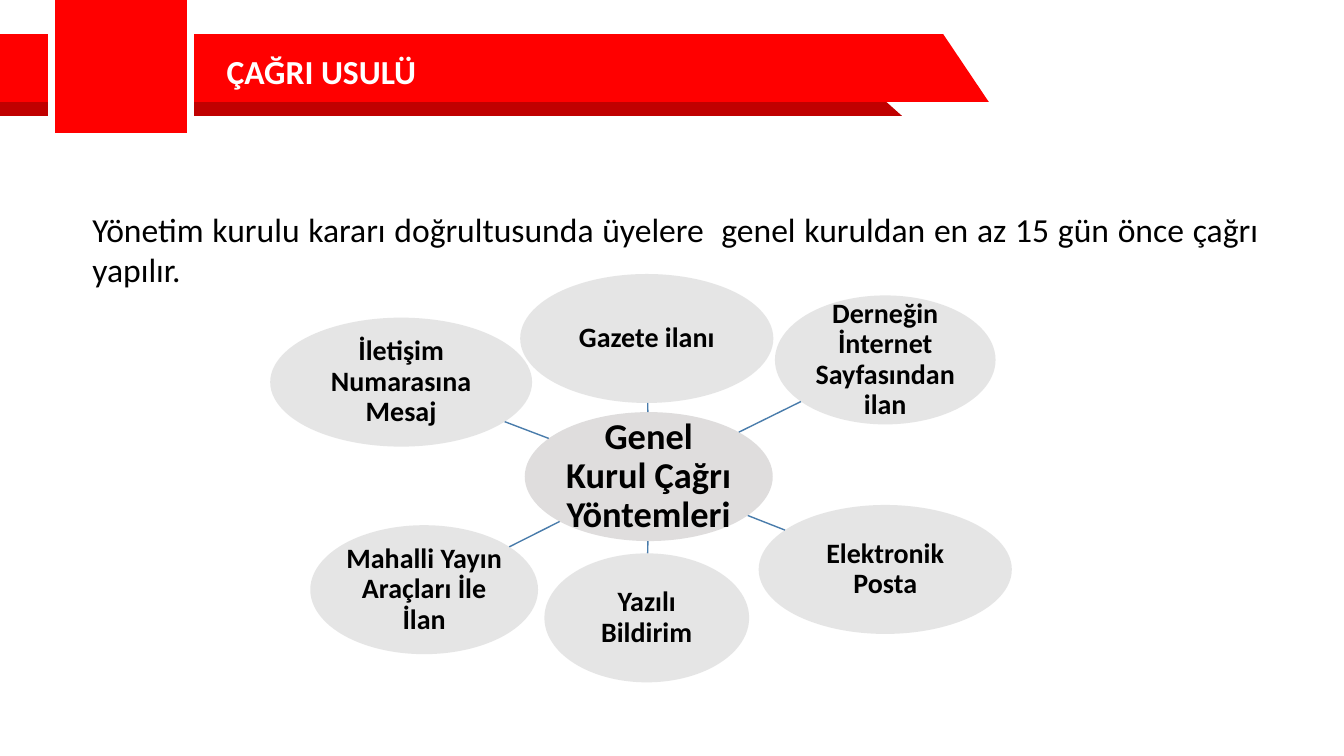
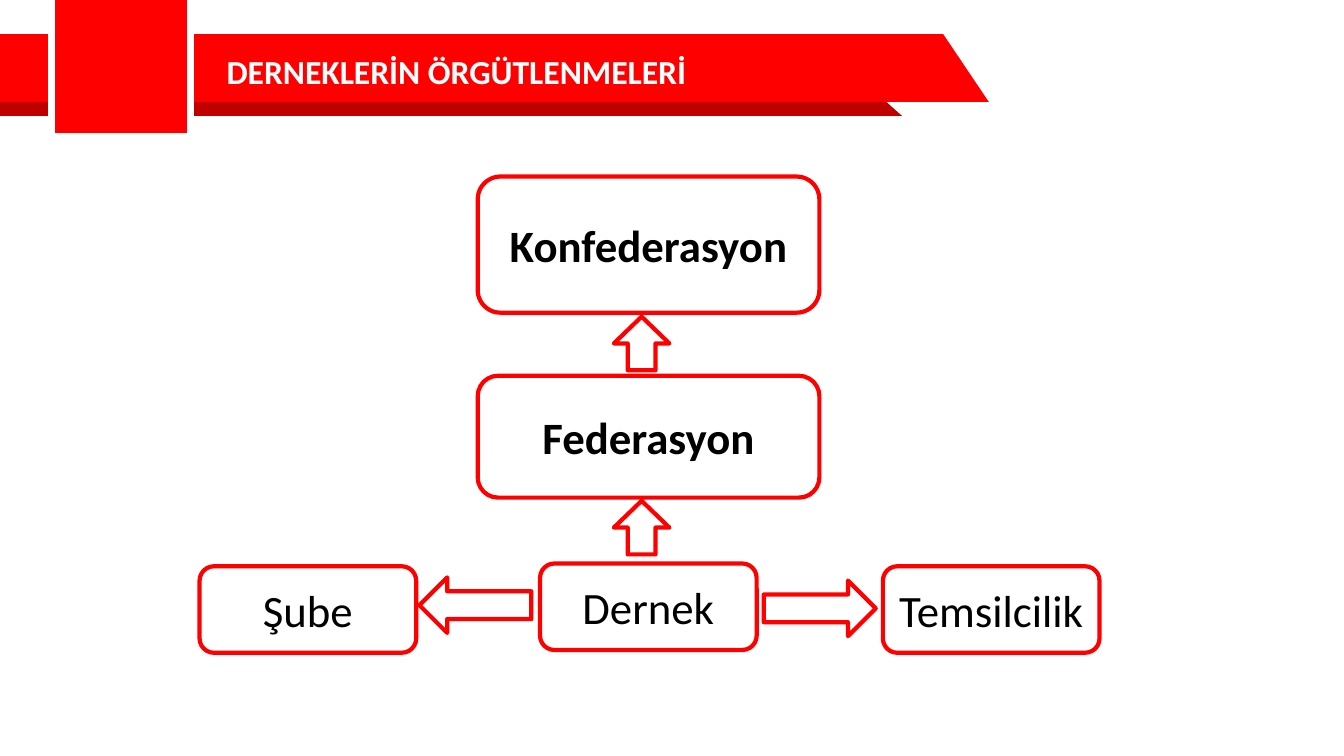
from dataclasses import dataclass
from math import hypot

from lxml.etree import SubElement
from pptx import Presentation
from pptx.dml.color import RGBColor
from pptx.enum.shapes import MSO_CONNECTOR as Connector, MSO_SHAPE as Shape
from pptx.enum.text import MSO_ANCHOR as Anchor, MSO_AUTO_SIZE as AutoSize, PP_ALIGN as Align
from pptx.oxml.ns import qn
from pptx.util import Cm, Pt


@dataclass(frozen=True)
class Theme:
    font: str = "Calibri"
    red: RGBColor = RGBColor(0xFF, 0x00, 0x00)
    dark_red: RGBColor = RGBColor(0xC0, 0x00, 0x00)
    white: RGBColor = RGBColor(0xFF, 0xFF, 0xFF)
    black: RGBColor = RGBColor(0x00, 0x00, 0x00)
    hub: RGBColor = RGBColor(0xAF, 0xAB, 0xAB)
    node: RGBColor = RGBColor(0xBF, 0xBF, 0xBF)
    spoke: RGBColor = RGBColor(0x49, 0x7C, 0xAB)
    title_size: int = 24
    body_size: int = 24
    hub_size: int = 26
    node_size: int = 20
    box_size: int = 32


theme = Theme()


def write(shape, text, size, color=theme.black, bold=False, align=Align.CENTER,
          anchor=Anchor.MIDDLE, wrap=True, margin=None, line_spacing=None):
    frame = shape.text_frame
    frame.word_wrap = wrap
    frame.vertical_anchor = anchor
    if margin is not None:
        frame.margin_left = frame.margin_right = Cm(margin)
        frame.margin_top = frame.margin_bottom = Cm(margin)
    paragraph = frame.paragraphs[0]
    paragraph.alignment = align
    paragraph.line_spacing = line_spacing
    run = paragraph.add_run()
    run.text = text
    run.font.name = theme.font
    run.font.size = Pt(size)
    run.font.bold = bold
    run.font.color.rgb = color


def add_filled(slide, kind, box, fill, line=None, line_width=3, opacity=None):
    """Add a preset shape; box is left, top, width, height in cm, opacity in percent."""
    shape = slide.shapes.add_shape(kind, *map(Cm, box))
    shape.shadow.inherit = False
    shape.fill.solid()
    shape.fill.fore_color.rgb = fill
    if opacity is not None:
        color = shape._element.spPr.find(".//" + qn("a:srgbClr"))
        SubElement(color, qn("a:alpha"), val=str(opacity * 1000))
    if line is None:
        shape.line.fill.background()
    else:
        shape.line.color.rgb = line
        shape.line.width = Pt(line_width)
    return shape


presentation = Presentation()
presentation.slide_width = Cm(33.87)
presentation.slide_height = Cm(19.05)
blank_layout = presentation.slide_layouts[6]

# Title band shared by both slides
bands = [
    (theme.dark_red, [(0, 1.2), (20.85, 1.24), (22.73, 2.92), (0, 2.92)]),
    (theme.red, [(0, 0.86), (23.77, 0.86), (24.92, 2.57), (0, 2.57)]),
]
titles = [("ÇAĞRI USULÜ", 5.33), ("DERNEKLERİN ÖRGÜTLENMELERİ", 12.22)]
slides = []
for title, title_width in titles:
    slide = presentation.slides.add_slide(blank_layout)
    for color, corners in bands:
        points = [(Cm(x), Cm(y)) for x, y in corners]
        builder = slide.shapes.build_freeform(*points[0])
        builder.add_line_segments(points[1:], close=True)
        band = builder.convert_to_shape()
        band.shadow.inherit = False
        band.fill.solid()
        band.fill.fore_color.rgb = color
        band.line.fill.background()
    add_filled(slide, Shape.RECTANGLE, (1.3, -0.4, 3.5, 3.84), theme.red, theme.white, 5)
    title_box = slide.shapes.add_textbox(Cm(5.46), Cm(1.16), Cm(title_width), Cm(1.28))
    title_box.text_frame.auto_size = AutoSize.SHAPE_TO_FIT_TEXT
    write(title_box, title, theme.title_size, theme.white, bold=True, align=Align.LEFT, wrap=False)
    slides.append(slide)
call_slide, structure_slide = slides

# Slide 1: ways of calling the assembly around a hub
ellipse_height = 3.25
hub_x, hub_y, hub_width = 16.35, 12.01, 6.25
hub_text = "Genel Kurul Çağrı Yöntemleri"
methods = [
    ("Gazete ilanı", 16.3, 8.53, 6.38),
    ("Derneğin İnternet Sayfasından ilan", 22.31, 9.07, 5.56),
    ("Elektronik Posta", 22.31, 14.35, 6.38),
    ("Yazılı Bildirim", 16.3, 15.57, 5.16),
    ("Mahalli Yayın Araçları İle İlan", 10.69, 14.86, 5.74),
    ("İletişim Numarasına Mesaj", 10.11, 9.63, 6.6),
]

# Spokes run from centre to centre, cut off at the edges of both ellipses
for _, x, y, width in methods:
    dx, dy = x - hub_x, y - hub_y
    start = 1 / hypot(dx / (hub_width / 2), dy / (ellipse_height / 2))
    end = 1 - 1 / hypot(dx / (width / 2), dy / (ellipse_height / 2))
    ends = [hub_x + start * dx, hub_y + start * dy, hub_x + end * dx, hub_y + end * dy]
    spoke = call_slide.shapes.add_connector(Connector.STRAIGHT, *map(Cm, ends))
    spoke.line.color.rgb = theme.spoke
    spoke.line.width = Pt(1)
    SubElement(spoke._element.spPr, qn("a:effectLst"))

ellipses = [(hub_text, hub_x, hub_y, hub_width, theme.hub, theme.hub_size)]
ellipses += [(*method, theme.node, theme.node_size) for method in methods]
for text, x, y, width, color, size in ellipses:
    box = (x - width / 2, y - ellipse_height / 2, width, ellipse_height)
    ellipse = add_filled(call_slide, Shape.OVAL, box, color, opacity=40)
    write(ellipse, text, size, bold=True, margin=0.03, line_spacing=0.9)

body = call_slide.shapes.add_textbox(Cm(2.08), Cm(5.13), Cm(29.9), Cm(3.33))
write(body, "Yönetim kurulu kararı doğrultusunda üyelere  genel kuruldan en az 15 gün önce çağrı yapılır.",
      theme.body_size, align=Align.JUSTIFY, anchor=Anchor.TOP)

# Slide 2: levels of organisation
organisations = [
    ("Konfederasyon", (12.04, 4.45, 8.61, 3.43), True),
    ("Federasyon", (12.04, 9.47, 8.61, 3.07), True),
    ("Şube", (5.03, 14.27, 5.46, 2.18), False),
    ("Dernek", (13.61, 14.2, 5.46, 2.18), False),
    ("Temsilcilik", (22.25, 14.27, 5.46, 2.18), False),
]
for name, box, bold in organisations:
    organisation = add_filled(structure_slide, Shape.ROUNDED_RECTANGLE, box, theme.white, theme.red)
    write(organisation, name, theme.box_size, bold=bold)

arrows = [
    (Shape.UP_ARROW, (15.47, 7.98, 1.4, 1.35)),
    (Shape.UP_ARROW, (15.47, 12.62, 1.4, 1.35)),
    (Shape.RIGHT_ARROW, (19.25, 14.63, 2.82, 1.4)),
    (Shape.LEFT_ARROW, (10.57, 14.55, 2.82, 1.4)),
]
for kind, box in arrows:
    add_filled(structure_slide, kind, box, theme.white, theme.red)

presentation.save("out.pptx")
